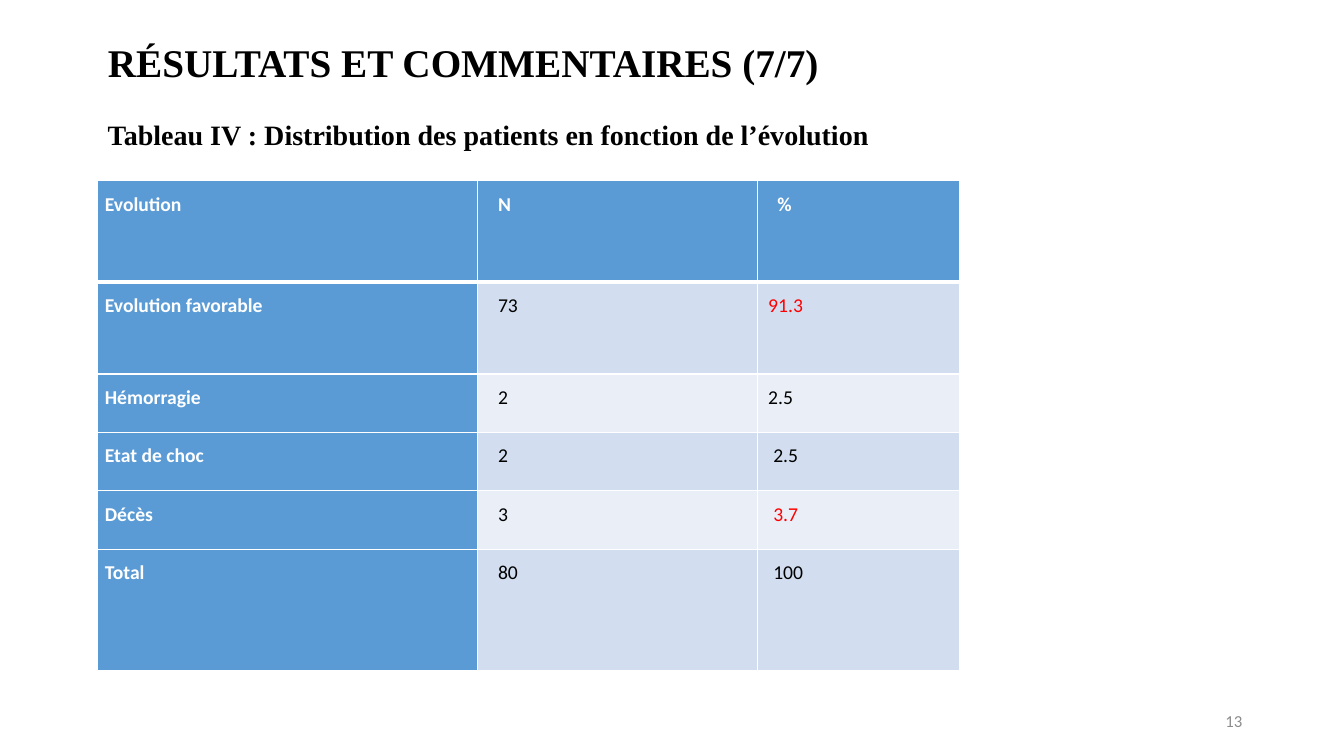
from pptx import Presentation
from pptx.dml.color import RGBColor
from pptx.enum.text import MSO_ANCHOR, MSO_AUTO_SIZE, PP_ALIGN
from pptx.oxml import parse_xml
from pptx.oxml.ns import nsdecls
from pptx.util import Inches, Pt

BLACK = RGBColor(0x00, 0x00, 0x00)
WHITE = RGBColor(0xFF, 0xFF, 0xFF)
RED = RGBColor(0xFF, 0x00, 0x00)
GREY = RGBColor(0x8C, 0x8C, 0x8C)
BLUE = RGBColor(0x5B, 0x9B, 0xD5)
BAND_DARK = RGBColor(0xD2, 0xDE, 0xEF)
BAND_LIGHT = RGBColor(0xEA, 0xEF, 0xF7)

COLUMN_WIDTHS = [3.77, 2.77, 2.01]
ROW_HEIGHTS = [1.01, 0.91, 0.58, 0.58, 0.58, 1.2]
COUNT_INDENT = 0.2
PERCENT_INDENTS = [0.2, 0.11, 0.11, 0.16, 0.16, 0.16]
OUTCOMES = [
    ("Evolution", "N", "%"),
    ("Evolution favorable", "73", "91.3"),
    ("Hémorragie", "2", "2.5"),
    ("Etat de choc", "2", "2.5"),
    ("Décès", "3", "3.7"),
    ("Total", "80", "100"),
]
HIGHLIGHTS = {"91.3", "3.7"}


def write_text(frame, text, size=14, font="Calibri", color=BLACK, bold=False,
               align=PP_ALIGN.LEFT, line_spacing=None, space_after=None):
    para = frame.paragraphs[0]
    para.alignment = align
    para.line_spacing = line_spacing
    para.space_after = space_after
    span = para.add_run()
    span.text = text
    span.font.size = Pt(size)
    span.font.name = font
    span.font.bold = bold
    span.font.color.rgb = color


class ResultsPage:
    heading_font = "Times New Roman"

    def __init__(self, deck):
        self.page = deck.slides.add_slide(deck.slide_layouts[5])

    def place(self, box, left, top, width, height, anchor):
        box.left, box.top = Inches(left), Inches(top)
        box.width, box.height = Inches(width), Inches(height)
        frame = box.text_frame
        frame.word_wrap = True
        frame.auto_size = MSO_AUTO_SIZE.NONE
        frame.vertical_anchor = anchor
        return frame

    def title(self, text, *area):
        frame = self.place(self.page.shapes.title, *area, MSO_ANCHOR.TOP)
        write_text(frame, text, size=28, font=self.heading_font, bold=True)

    def text(self, text, *area, anchor=MSO_ANCHOR.TOP, **style):
        box = self.page.shapes.add_textbox(0, 0, 0, 0)
        write_text(self.place(box, *area, anchor), text, **style)

    def table(self, rows, left, top):
        table = self.page.shapes.add_table(
            len(rows), len(COLUMN_WIDTHS), Inches(left), Inches(top),
            Inches(sum(COLUMN_WIDTHS)), Inches(sum(ROW_HEIGHTS))).table
        for column, width in zip(table.columns, COLUMN_WIDTHS):
            column.width = Inches(width)
        for row, height in zip(table.rows, ROW_HEIGHTS):
            row.height = Inches(height)
        for row_index, values in enumerate(rows):
            indents = (0.07, COUNT_INDENT, PERCENT_INDENTS[row_index])
            for column_index, value in enumerate(values):
                self.cell(table.cell(row_index, column_index), value,
                          row_index, column_index, indents[column_index])

    def cell(self, cell, value, row_index, column_index, indent):
        is_header = row_index == 0 or column_index == 0
        self.borders(cell, top=3 if row_index == 1 else 1,
                     bottom=3 if row_index == 0 else 1)
        cell.fill.solid()
        if is_header:
            cell.fill.fore_color.rgb = BLUE
            color = WHITE
        else:
            cell.fill.fore_color.rgb = BAND_DARK if row_index % 2 else BAND_LIGHT
            color = RED if value in HIGHLIGHTS else BLACK
        cell.margin_left, cell.margin_right = Inches(indent), Inches(0.07)
        cell.margin_top = cell.margin_bottom = 0
        write_text(cell.text_frame, value, color=color, bold=is_header,
                   line_spacing=1.5, space_after=Pt(8))

    def borders(self, cell, top, bottom):
        properties = cell._tc.get_or_add_tcPr()
        for side, width in (("L", 1), ("R", 1), ("T", top), ("B", bottom)):
            properties.append(parse_xml(
                f'<a:ln{side} {nsdecls("a")} w="{Pt(width)}"><a:solidFill>'
                f'<a:srgbClr val="{WHITE}"/></a:solidFill></a:ln{side}>'))


def main():
    deck = Presentation()
    deck.slide_width, deck.slide_height = Inches(13.33), Inches(7.5)
    page = ResultsPage(deck)
    page.title("RÉSULTATS ET COMMENTAIRES (7/7)", 0.97, 0.33, 9.14, 0.57)
    page.table(OUTCOMES, 0.97, 1.79)
    page.text("Tableau IV : Distribution des patients en fonction de l’évolution",
              0.97, 1.12, 9.14, 0.44, size=20, font=page.heading_font, bold=True)
    page.text("13", 9.42, 6.95, 3, 0.4, anchor=MSO_ANCHOR.MIDDLE,
              size=12, color=GREY, align=PP_ALIGN.RIGHT)
    deck.save("out.pptx")


if __name__ == "__main__":
    main()
